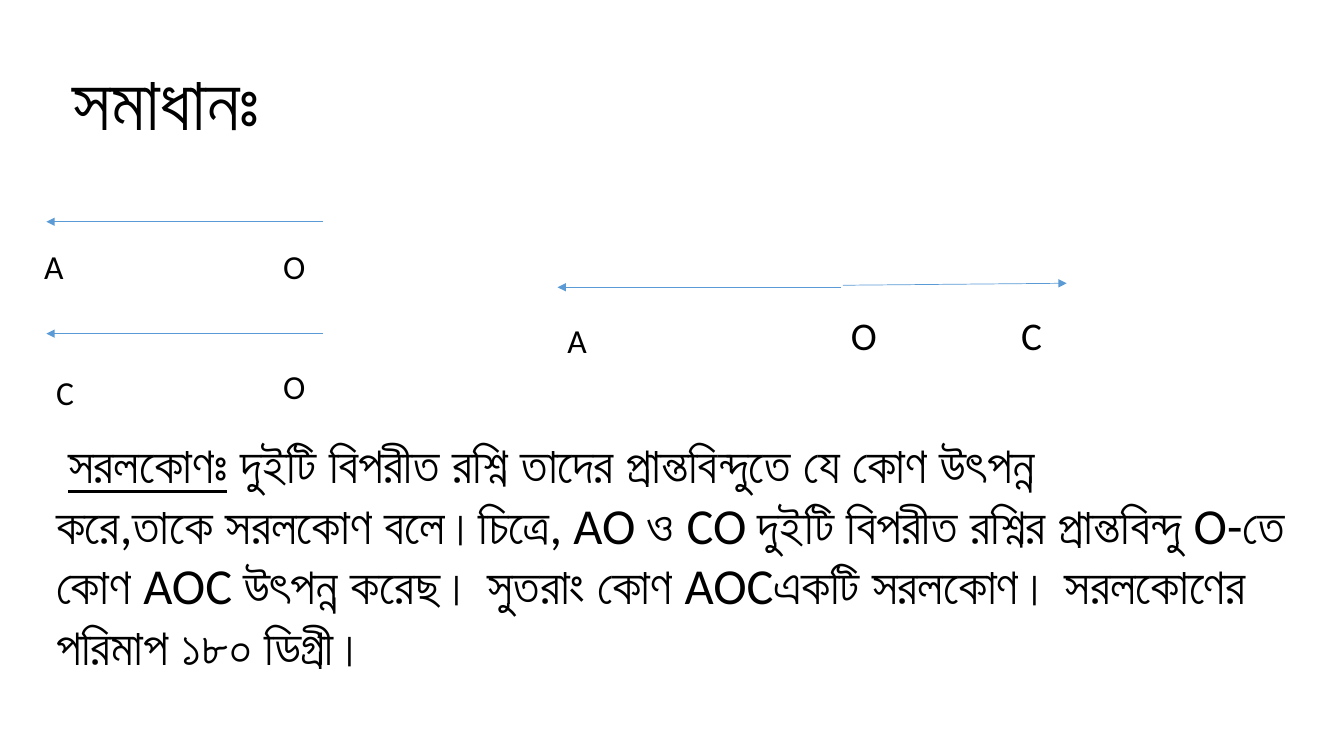
from typing import NamedTuple

from lxml.etree import SubElement
from pptx import Presentation
from pptx.dml.color import RGBColor
from pptx.enum.shapes import MSO_CONNECTOR as Connector
from pptx.enum.text import MSO_ANCHOR as Anchor, MSO_AUTO_SIZE as AutoSize, PP_ALIGN as Align
from pptx.oxml.ns import qn
from pptx.util import Emu, Pt

FONT = "Calibri"
BLACK = "000000"
RAY_BLUE = "5B9BD5"


class Ray(NamedTuple):
    start_x: int
    start_y: int
    end_x: int
    end_y: int


class PointLabel(NamedTuple):
    text: str
    left: int
    top: int
    width: int
    height: int = 50
    size: int = 24


SEPARATE_RAYS = [Ray(320, 220, 46, 220), Ray(320, 331, 46, 331)]
STRAIGHT_ANGLE = [Ray(834, 285, 553, 285), Ray(836, 283, 1058, 281)]
POINT_LABELS = [
    PointLabel("A", 34, 239, 75),
    PointLabel("O", 271, 239, 63),
    PointLabel("C", 46, 364, 63),
    PointLabel("O", 271, 358, 63),
    PointLabel("A", 553, 312, 93),
    PointLabel("O", 834, 304, 58, 57, 28),
    PointLabel("C", 1003, 304, 54, 57, 28),
]
DEFINITION_TERM = "সরলকোণঃ"
DEFINITION_START = " দুইটি বিপরীত রশ্নি তাদের প্রান্তবিন্দুতে যে কোণ উৎপন্ন"
DEFINITION_REST = (
    "করে,তাকে সরলকোণ বলে।চিত্রে, AO ও CO দুইটি বিপরীত রশ্নির প্রান্তবিন্দু O-তে "
    "কোণ AOC উৎপন্ন করেছ। সুতরাং কোণ AOCএকটি সরলকোণ। "
    "সরলকোণের পরিমাপ ১৮০ ডিগ্রী।"
)


def px(length: int) -> Emu:
    """Convert px, at 100 to the inch, into EMU."""
    return Emu(length * 9144)


def color(value: str) -> RGBColor:
    return RGBColor.from_string(value)


def add_span(para, text: str, *, size: int, underline: bool = False) -> None:
    span = para.add_run()
    span.text = text
    span.font.name = FONT
    span.font.size = Pt(size)
    span.font.underline = underline
    span.font.color.rgb = color(BLACK)


def prepare_frame(box):
    frame = box.text_frame
    frame.word_wrap = True
    frame.auto_size = AutoSize.SHAPE_TO_FIT_TEXT
    frame.vertical_anchor = Anchor.TOP
    return frame


def add_title(page) -> None:
    title = page.shapes.title
    title.left, title.top, title.width, title.height = px(62), px(49), px(242), px(101)
    para = prepare_frame(title).paragraphs[0]
    para.alignment = Align.LEFT
    add_span(para, "সমাধানঃ", size=54)


def add_definition(page) -> None:
    box = page.shapes.add_textbox(px(46), px(425), px(1251), px(374))
    frame = prepare_frame(box)
    opening = frame.paragraphs[0]
    opening._p.get_or_add_pPr().set("indent", str(px(12)))
    add_span(opening, DEFINITION_TERM, size=36, underline=True)
    add_span(opening, DEFINITION_START, size=36)
    add_span(frame.add_paragraph(), DEFINITION_REST, size=36)


def add_ray(shapes, ray: Ray) -> None:
    line = shapes.add_connector(Connector.STRAIGHT, *map(px, ray))
    line.line.color.rgb = color(RAY_BLUE)
    line.line.width = Pt(0.5)
    SubElement(line.line._get_or_add_ln(), qn("a:tailEnd"), type="triangle")
    SubElement(line._element.spPr, qn("a:effectLst"))


def add_point_label(page, label: PointLabel) -> None:
    box = page.shapes.add_textbox(
        px(label.left), px(label.top), px(label.width), px(label.height)
    )
    add_span(prepare_frame(box).paragraphs[0], label.text, size=label.size)


def main() -> None:
    deck = Presentation()
    deck.slide_width, deck.slide_height = px(1333), px(750)
    page = deck.slides.add_slide(deck.slide_layouts[5])
    add_title(page)
    add_definition(page)
    for ray in SEPARATE_RAYS:
        add_ray(page.shapes, ray)
    angle = page.shapes.add_group_shape()
    for ray in STRAIGHT_ANGLE:
        add_ray(angle.shapes, ray)
    for label in POINT_LABELS:
        add_point_label(page, label)
    deck.save("out.pptx")


if __name__ == "__main__":
    main()
